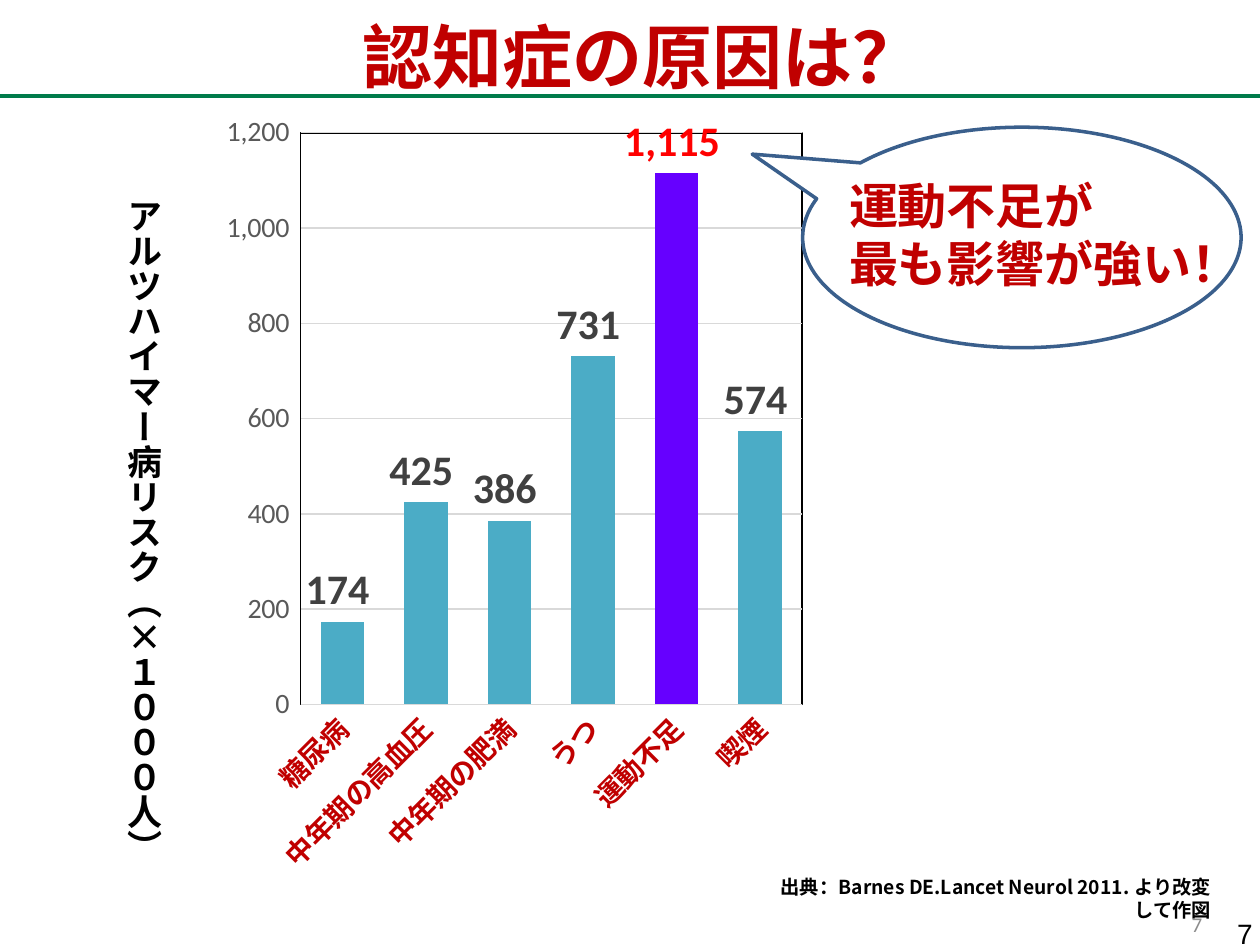
from lxml import etree
from pptx import Presentation
from pptx.chart import data as chart_data
from pptx.dml.color import RGBColor
from pptx.enum import chart as ch, shapes, text
from pptx.oxml import ns, parse_xml
from pptx.util import Inches, Pt

COLORS = {
    "white": "FFFFFF", "black": "000000", "title": "C00000", "rule": "007B4B",
    "bar": "4BACC6", "highlight": "6600FF", "alert": "FF0000", "grid": "D9D9D9",
    "axis": "595959", "label": "404040", "outline": "3A5F8C", "page": "8C8C8C",
}
LATIN, JAPANESE = "Calibri", "Noto Sans CJK JP"
NUMBER_FORMAT = r"#,##0_);[Red]\(#,##0\)"
RISKS = {
    "糖尿病": 174, "中年期の高血圧": 425, "中年期の肥満": 386,
    "うつ": 731, "運動不足": 1115, "喫煙": 574,
}


def rgb(name):
    return RGBColor.from_string(COLORS[name])


def style_font(font, size, color, bold=False, name=LATIN):
    font.size = Pt(size)
    font.bold = bold
    font.name = name
    font.color.rgb = rgb(color)


def style_line(line, color, width):
    line.color.rgb = rgb(color)
    line.width = Pt(width)


def add_text(slide, box, content, size, color, bold=True, font=LATIN,
             align=text.PP_ALIGN.LEFT, anchor=text.MSO_ANCHOR.TOP,
             wrap=True, grow=True, vertical=False):
    frame = slide.shapes.add_textbox(*map(Inches, box)).text_frame
    frame.word_wrap = wrap
    frame.vertical_anchor = anchor
    frame.auto_size = (text.MSO_AUTO_SIZE.SHAPE_TO_FIT_TEXT if grow
                       else text.MSO_AUTO_SIZE.NONE)
    if vertical:
        frame._txBody.bodyPr.set("vert", "eaVert")
    frame.text = content
    for paragraph in frame.paragraphs:
        paragraph.alignment = align
        for run in paragraph.runs:
            style_font(run.font, size, color, bold, font)
            east_asian = etree.SubElement(run._r.get_or_add_rPr(), ns.qn("a:ea"))
            east_asian.set("typeface", JAPANESE)


def add_header(slide, left, top, width, height):
    rule_y = Inches(top + height)
    rule = slide.shapes.add_connector(
        shapes.MSO_CONNECTOR.STRAIGHT,
        Inches(left), rule_y, Inches(left + width), rule_y)
    style_line(rule.line, "rule", 2)
    etree.SubElement(rule._element.spPr, ns.qn("a:effectLst"))
    add_text(slide, (left + 1.34, top + 0.06, 7.6, 0.77), "認知症の原因は？",
             40, "title", align=text.PP_ALIGN.CENTER)


def frame_plot(chart, x, y, w, h):
    plot_area = chart._chartSpace.chart.plotArea
    for old in plot_area.findall(ns.qn("c:layout")):
        plot_area.remove(old)
    places = "".join(f'<c:{tag} val="{value}"/>' for tag, value in (
        ("layoutTarget", "inner"), ("xMode", "edge"), ("yMode", "edge"),
        ("x", x), ("y", y), ("w", w), ("h", h)))
    plot_area.insert(0, parse_xml(
        f'<c:layout {ns.nsdecls("c")}><c:manualLayout>{places}'
        '</c:manualLayout></c:layout>'))
    plot_area.append(parse_xml(
        f'<c:spPr {ns.nsdecls("c", "a")}><a:noFill/><a:ln w="9525"><a:solidFill>'
        f'<a:srgbClr val="{COLORS["black"]}"/></a:solidFill></a:ln></c:spPr>'))


def style_axes(chart):
    causes, risk = chart.category_axis, chart.value_axis
    for axis in (causes, risk):
        axis.major_tick_mark = axis.minor_tick_mark = ch.XL_TICK_MARK.NONE
    style_font(causes.tick_labels.font, 16, "title", True)
    style_font(risk.tick_labels.font, 16, "axis")
    style_line(causes.format.line, "grid", 0.75)
    risk.format.line.fill.background()
    style_line(risk.major_gridlines.format.line, "grid", 0.75)
    risk.minimum_scale, risk.maximum_scale, risk.major_unit = 0, 1200, 200
    risk.tick_labels.number_format = NUMBER_FORMAT
    risk.tick_labels.number_format_is_linked = False


def style_bars(plot):
    plot.gap_width, plot.overlap = 92, -90
    plot.vary_by_categories = False
    bars = plot.series[0]
    bars.format.fill.solid()
    bars.format.fill.fore_color.rgb = rgb("bar")
    labels = bars.data_labels
    labels.show_value = True
    labels.position = ch.XL_LABEL_POSITION.OUTSIDE_END
    labels.number_format = NUMBER_FORMAT
    labels.number_format_is_linked = False
    style_font(labels.font, 24, "label", True)

    inactivity = bars.points[list(RISKS).index("運動不足")]
    inactivity.format.fill.solid()
    inactivity.format.fill.fore_color.rgb = rgb("highlight")
    peak = inactivity.data_label
    style_font(peak.font, 24, "alert", True)
    peak.position = ch.XL_LABEL_POSITION.OUTSIDE_END
    peak_format = parse_xml(
        f'<c:numFmt {ns.nsdecls("c")} formatCode="{NUMBER_FORMAT}" sourceLinked="0"/>')
    peak.font._element.getparent().getparent().getparent().addprevious(peak_format)


def add_risk_chart(slide, left, top, width, height):
    add_text(slide, (left - 0.91, top + 0.64, 0.54, 4.53),
             "アルツハイマー病リスク（×１０００人）", 20, "black",
             font=JAPANESE, wrap=False, vertical=True)
    risks = chart_data.CategoryChartData(number_format=NUMBER_FORMAT)
    risks.categories = list(RISKS)
    risks.add_series("Series 1", list(RISKS.values()))
    chart = slide.shapes.add_chart(
        ch.XL_CHART_TYPE.COLUMN_CLUSTERED,
        *map(Inches, (left, top, width, height)), risks).chart
    chart.has_legend = chart.has_title = False
    style_font(chart.font, 10, "black")
    style_axes(chart)
    style_bars(chart.plots[0])
    frame_plot(chart, 0.137, 0.033, 0.831, 0.698)


def add_callout(slide, left, top, width, height):
    balloon = slide.shapes.add_shape(
        shapes.MSO_SHAPE.OVAL_CALLOUT, *map(Inches, (left, top, width, height)))
    balloon.adjustments[0], balloon.adjustments[1] = -0.615, -0.378
    balloon.shadow.inherit = False
    balloon.fill.solid()
    balloon.fill.fore_color.rgb = rgb("white")
    style_line(balloon.line, "outline", 2)
    add_text(slide, (left + 0.27, top + 0.33, 3.56, 1.04),
             "運動不足が\n最も影響が強い！", 28, "title")


def add_footer(slide, left, top, width, height):
    add_text(slide, (left, top, 3.74, 0.29),
             "出典：Barnes DE.Lancet Neurol 2011. より改変して作図",
             11, "black", font=JAPANESE, align=text.PP_ALIGN.RIGHT)
    middle = text.MSO_ANCHOR.MIDDLE
    add_text(slide, (left + width - 0.68, top + 0.17, 0.65, 0.52), "7", 12, "page",
             bold=False, anchor=middle, grow=False)
    add_text(slide, (left + width - 2.33, top + height - 0.4, 2.33, 0.4), "7", 16,
             "black", bold=False, font="Arial", align=text.PP_ALIGN.RIGHT,
             anchor=middle, grow=False)


def main():
    deck = Presentation()
    deck.slide_width, deck.slide_height = Inches(10), Inches(7.5)
    slide = deck.slides.add_slide(deck.slide_layouts[6])
    add_header(slide, -0.04, 0, 10.08, 0.76)
    add_risk_chart(slide, 1.73, 0.84, 4.79, 6.5)
    add_callout(slide, 6.37, 1.01, 3.48, 1.75)
    add_footer(slide, 5.97, 6.9, 4.07, 0.71)
    deck.save("out.pptx")


if __name__ == "__main__":
    main()
